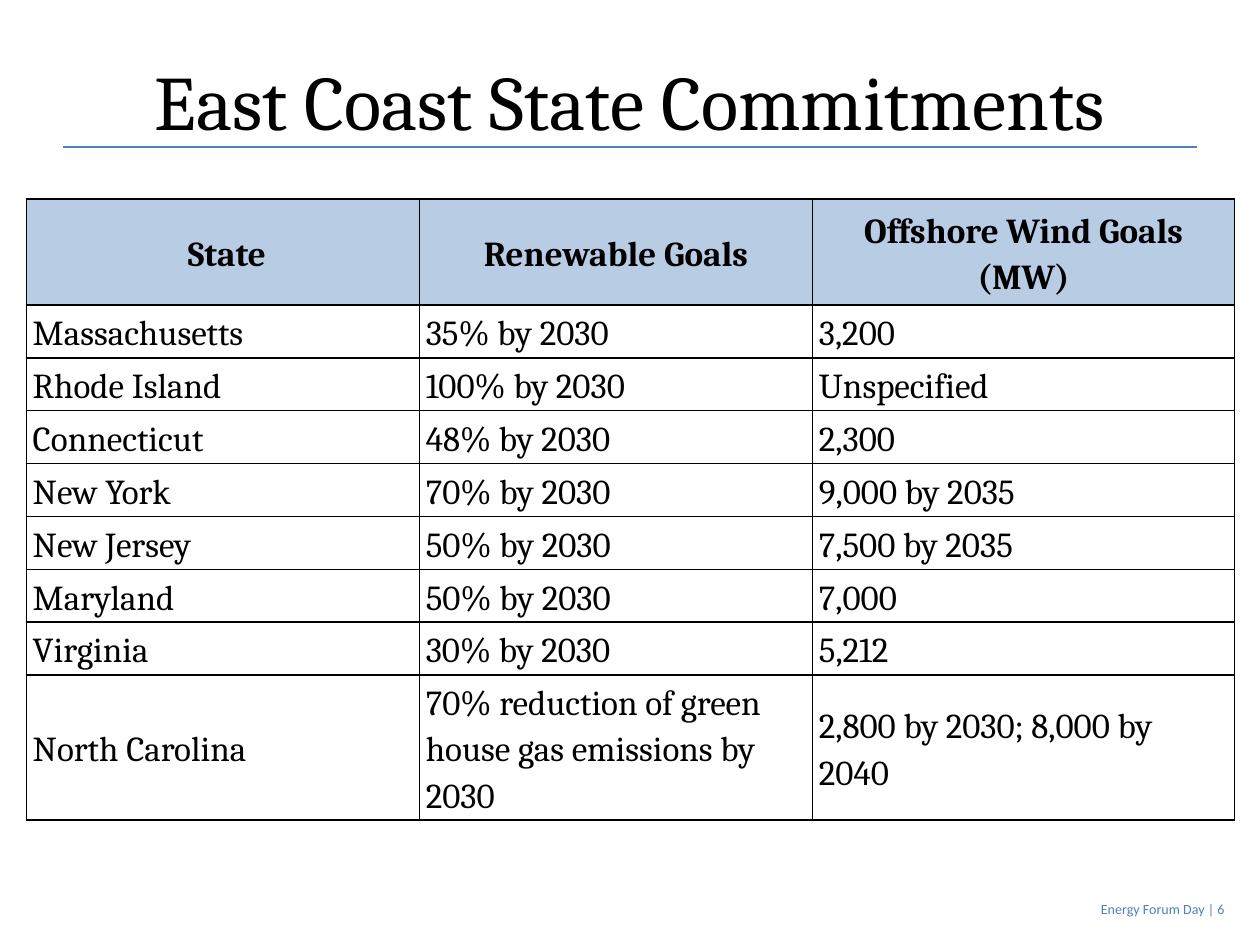
from lxml.etree import SubElement
from pptx import Presentation
from pptx.dml.color import RGBColor
from pptx.enum.shapes import MSO_CONNECTOR as Line
from pptx.enum.text import MSO_ANCHOR as Anchor, MSO_AUTO_SIZE as Fit, PP_ALIGN as Align
from pptx.oxml.ns import qn
from pptx.util import Inches, Pt

BLACK = RGBColor(0x00, 0x00, 0x00)
BLUE = RGBColor(0x4F, 0x81, 0xBD)
PALE = RGBColor(0xB8, 0xCC, 0xE4)

WIDTHS = [3.12, 3.12, 3.35]
HEAD_H, ROW_H = 0.84, 0.42
GOALS = [
    (" State", "Renewable Goals", "Offshore Wind Goals (MW)"),
    ("Massachusetts", "35% by 2030", "3,200"),
    ("Rhode Island", "100% by 2030", "Unspecified"),
    ("Connecticut", "48% by 2030", "2,300"),
    ("New York", "70% by 2030", "9,000 by 2035"),
    ("New Jersey", "50% by 2030", "7,500 by 2035"),
    ("Maryland", "50% by 2030", "7,000"),
    ("Virginia", "30% by 2030", "5,212"),
    ("North Carolina", "70% reduction of green house gas emissions by 2030",
     "2,800 by 2030; 8,000 by 2040"),
]


class Deck:
    serif, sans = "Cambria", "Calibri"

    def __init__(self):
        self.prs = Presentation()
        self.prs.slide_width, self.prs.slide_height = Inches(10), Inches(7.5)
        self.slide = self.prs.slides.add_slide(self.prs.slide_layouts[5])

    def style(self, para, size, name, color=BLACK, bold=False, align=Align.LEFT):
        font = para.font
        font.size, font.name, font.bold = Pt(size), name, bold
        font.color.rgb = color
        para.alignment = align

    def title(self, text, left, top, width, height):
        shape = self.slide.shapes.title
        shape.left, shape.top = Inches(left), Inches(top)
        shape.width, shape.height = Inches(width), Inches(height)
        frame = shape.text_frame
        frame.text, frame.auto_size = text, Fit.NONE
        frame.vertical_anchor = Anchor.MIDDLE
        self.style(frame.paragraphs[0], 44, self.serif, align=Align.CENTER)

    def rule(self, left, right, y):
        line = self.slide.shapes.add_connector(
            Line.STRAIGHT, Inches(left), Inches(y), Inches(right), Inches(y))
        line.line.color.rgb, line.line.width = BLUE, Pt(1.25)
        SubElement(line._element.spPr, qn("a:effectLst"))

    def footer(self, text, left, top, width, height):
        box = self.slide.shapes.add_textbox(
            Inches(left), Inches(top), Inches(width), Inches(height))
        frame = box.text_frame
        frame.text, frame.word_wrap = text, False
        frame.auto_size = Fit.SHAPE_TO_FIT_TEXT
        frame.vertical_anchor = Anchor.MIDDLE
        frame.margin_left = 0
        self.style(frame.paragraphs[0], 8, self.sans, BLUE, align=Align.RIGHT)

    def border(self, cell):
        props = cell._tc.get_or_add_tcPr()
        for spot, side in enumerate(("a:lnL", "a:lnR", "a:lnT", "a:lnB")):
            edge = props.makeelement(qn(side), {"w": str(Pt(1))})
            fill = SubElement(edge, qn("a:solidFill"))
            SubElement(fill, qn("a:srgbClr"), val=str(BLACK))
            props.insert(spot, edge)

    def cell(self, cell, text, head):
        cell.text, cell.vertical_anchor = text, Anchor.MIDDLE
        cell.margin_left = cell.margin_right = Inches(0.05)
        cell.margin_top = cell.margin_bottom = 0
        if head:
            cell.fill.solid()
            cell.fill.fore_color.rgb = PALE
        else:
            cell.fill.background()
        para = cell.text_frame.paragraphs[0]
        para.line_spacing = 1.15
        self.style(para, 20, self.serif, bold=head,
                   align=Align.CENTER if head else Align.LEFT)
        self.border(cell)

    def table(self, data, left, top):
        height = HEAD_H + ROW_H * (len(data) - 1)
        table = self.slide.shapes.add_table(
            len(data), len(WIDTHS), Inches(left), Inches(top),
            Inches(sum(WIDTHS)), Inches(height)).table
        table.horz_banding = table.first_row = False
        for col, width in zip(table.columns, WIDTHS):
            col.width = Inches(width)
        for r, texts in enumerate(data):
            table.rows[r].height = Inches(ROW_H if r else HEAD_H)
            for c, text in enumerate(texts):
                self.cell(table.cell(r, c), text, r == 0)


def main():
    deck = Deck()
    deck.footer("Energy Forum Day | 6", 8.72, 7.09, 1.1, 0.24)
    deck.table(GOALS, 0.21, 1.58)
    deck.title("East Coast State Commitments", 0, 0.17, 10, 1.25)
    deck.rule(0.5, 9.5, 1.17)
    deck.prs.save("out.pptx")


if __name__ == "__main__":
    main()
